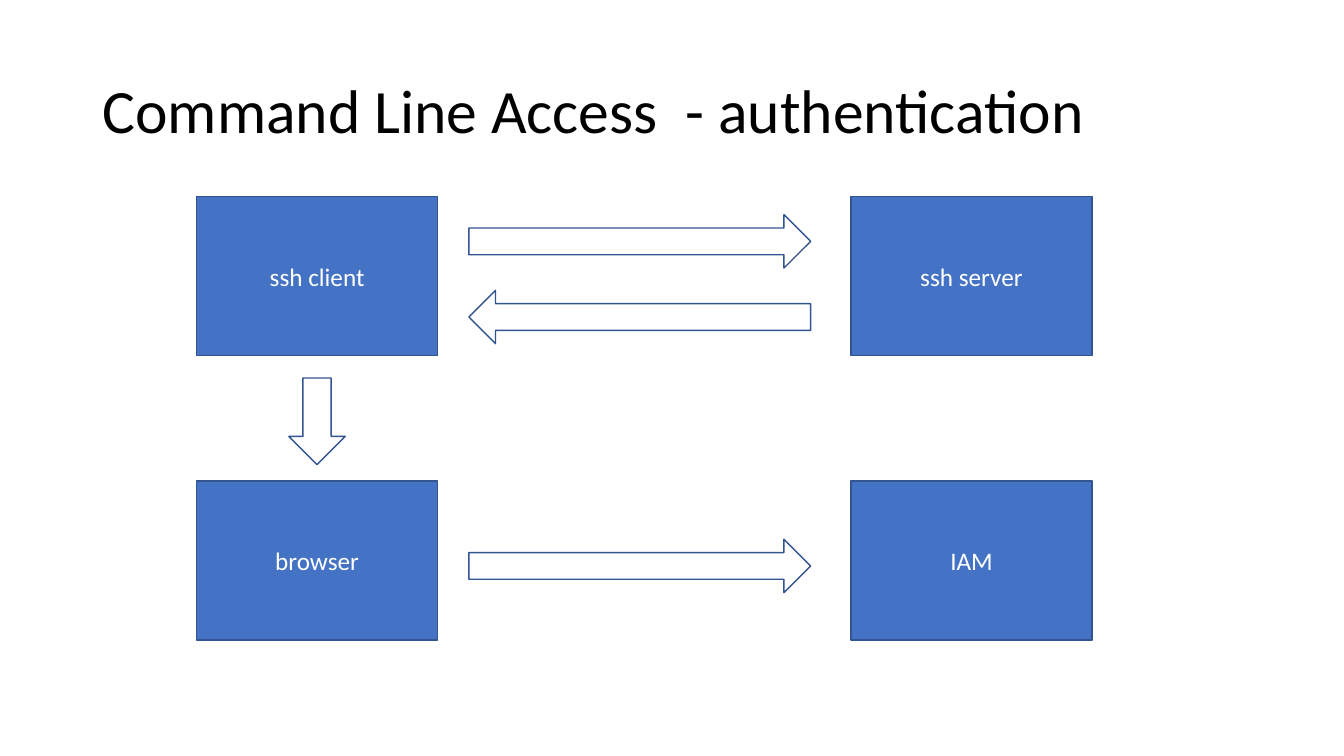
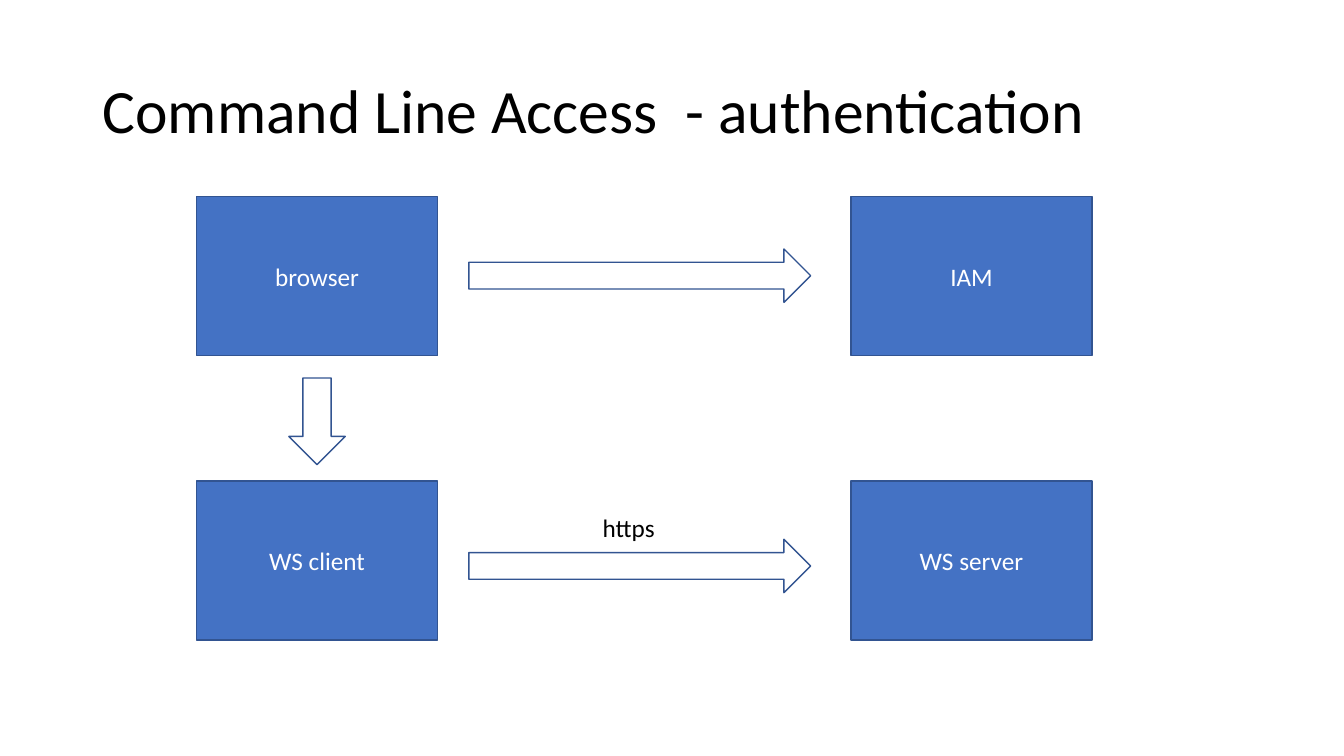
from dataclasses import dataclass

from pptx import Presentation
from pptx.dml.color import RGBColor
from pptx.enum.shapes import MSO_SHAPE
from pptx.enum.text import MSO_ANCHOR, PP_ALIGN
from pptx.util import Inches, Pt

RECTANGLE = MSO_SHAPE.RECTANGLE
RIGHT_ARROW = MSO_SHAPE.RIGHT_ARROW
DOWN_ARROW = MSO_SHAPE.DOWN_ARROW
TOP, MIDDLE = MSO_ANCHOR.TOP, MSO_ANCHOR.MIDDLE
LEFT, CENTER = PP_ALIGN.LEFT, PP_ALIGN.CENTER


@dataclass(frozen=True)
class Theme:
    font: str = "Calibri"
    title_size: int = 44
    body_size: int = 18
    line_width: int = 1
    dark: RGBColor = RGBColor(0x00, 0x00, 0x00)
    light: RGBColor = RGBColor(0xFF, 0xFF, 0xFF)
    node: RGBColor = RGBColor(0x44, 0x72, 0xC4)
    outline: RGBColor = RGBColor(0x32, 0x54, 0x91)


THEME = Theme()
TITLE = "Command Line Access  - authentication"

# Regions: left, top, width, height in inches
TITLE_BOX = (0.92, 0.4, 11.5, 1.45)
DIAGRAM_BOX = (1.95, 1.95, 8.88, 4.4)

# Diagram parts, in inches
NODE_WIDTH, NODE_HEIGHT = 2.39, 1.58
FLOW_INSET, FLOW_HEIGHT = 2.7, 0.53
DOWN_WIDTH, DOWN_HEIGHT, DOWN_GAP = 0.56, 0.86, 0.22
LABEL_SHIFT, LABEL_RISE, LABEL_WIDTH, LABEL_HEIGHT = 1.23, 0.32, 3, 0.4


@dataclass(frozen=True)
class Flow:
    """An arrow between the two nodes of a row, offset from the row's top."""
    offset: float
    backward: bool = False
    label: str = ""


# Each slide has two rows: left node, right node, flows between them
SLIDES = [
    [
        ("ssh client", "ssh server", [Flow(0.18), Flow(0.93, backward=True)]),
        ("browser", "IAM", [Flow(0.58)]),
    ],
    [
        ("browser", "IAM", [Flow(0.52)]),
        ("WS client", "WS server", [Flow(0.58, label="https")]),
    ],
]


def write(shape, text, size, color, align=LEFT, anchor=TOP, spacing=1.0):
    frame = shape.text_frame
    frame.word_wrap = True
    frame.vertical_anchor = anchor
    paragraph = frame.paragraphs[0]
    paragraph.alignment = align
    paragraph.line_spacing = spacing
    run = paragraph.add_run()
    run.text = text
    run.font.name = THEME.font
    run.font.size = Pt(size)
    run.font.color.rgb = color


def add_outlined(slide, preset, box, fill):
    shape = slide.shapes.add_shape(preset, *map(Inches, box))
    shape.shadow.inherit = False
    shape.fill.solid()
    shape.fill.fore_color.rgb = fill
    shape.line.color.rgb = THEME.outline
    shape.line.width = Pt(THEME.line_width)
    return shape


def add_title(slide, box):
    title = slide.shapes.add_textbox(*map(Inches, box))
    write(title, TITLE, THEME.title_size, THEME.dark, anchor=MIDDLE, spacing=0.9)


def add_node(slide, left, top, name):
    node = add_outlined(slide, RECTANGLE, (left, top, NODE_WIDTH, NODE_HEIGHT), THEME.node)
    write(node, name, THEME.body_size, THEME.light, CENTER, MIDDLE)


def add_flow(slide, left, top, width, flow):
    arrow = add_outlined(slide, RIGHT_ARROW, (left, top, width, FLOW_HEIGHT), THEME.light)
    if flow.backward:
        arrow.rotation = 180
    if flow.label:
        label_box = (left + LABEL_SHIFT, top - LABEL_RISE, LABEL_WIDTH, LABEL_HEIGHT)
        label = slide.shapes.add_textbox(*map(Inches, label_box))
        write(label, flow.label, THEME.body_size, THEME.dark)


def add_diagram(slide, box, rows):
    left, top, width, height = box
    right_node = left + width - NODE_WIDTH
    row_pitch = (height - NODE_HEIGHT) / (len(rows) - 1)

    # Rows of nodes and the flows between them
    for index, (source, target, flows) in enumerate(rows):
        row_top = top + index * row_pitch
        add_node(slide, left, row_top, source)
        add_node(slide, right_node, row_top, target)
        for flow in flows:
            add_flow(slide, left + FLOW_INSET, row_top + flow.offset,
                     width - 2 * FLOW_INSET - 0.09, flow)

    # Step down from the upper left node to the lower one
    down_left = left + (NODE_WIDTH - DOWN_WIDTH) / 2
    down_top = top + NODE_HEIGHT + DOWN_GAP
    add_outlined(slide, DOWN_ARROW, (down_left, down_top, DOWN_WIDTH, DOWN_HEIGHT), THEME.light)


def main():
    deck = Presentation()
    deck.slide_width, deck.slide_height = Inches(13.33), Inches(7.5)
    blank = deck.slide_layouts[6]
    for rows in SLIDES:
        slide = deck.slides.add_slide(blank)
        add_title(slide, TITLE_BOX)
        add_diagram(slide, DIAGRAM_BOX, rows)
    deck.save("out.pptx")


if __name__ == "__main__":
    main()
